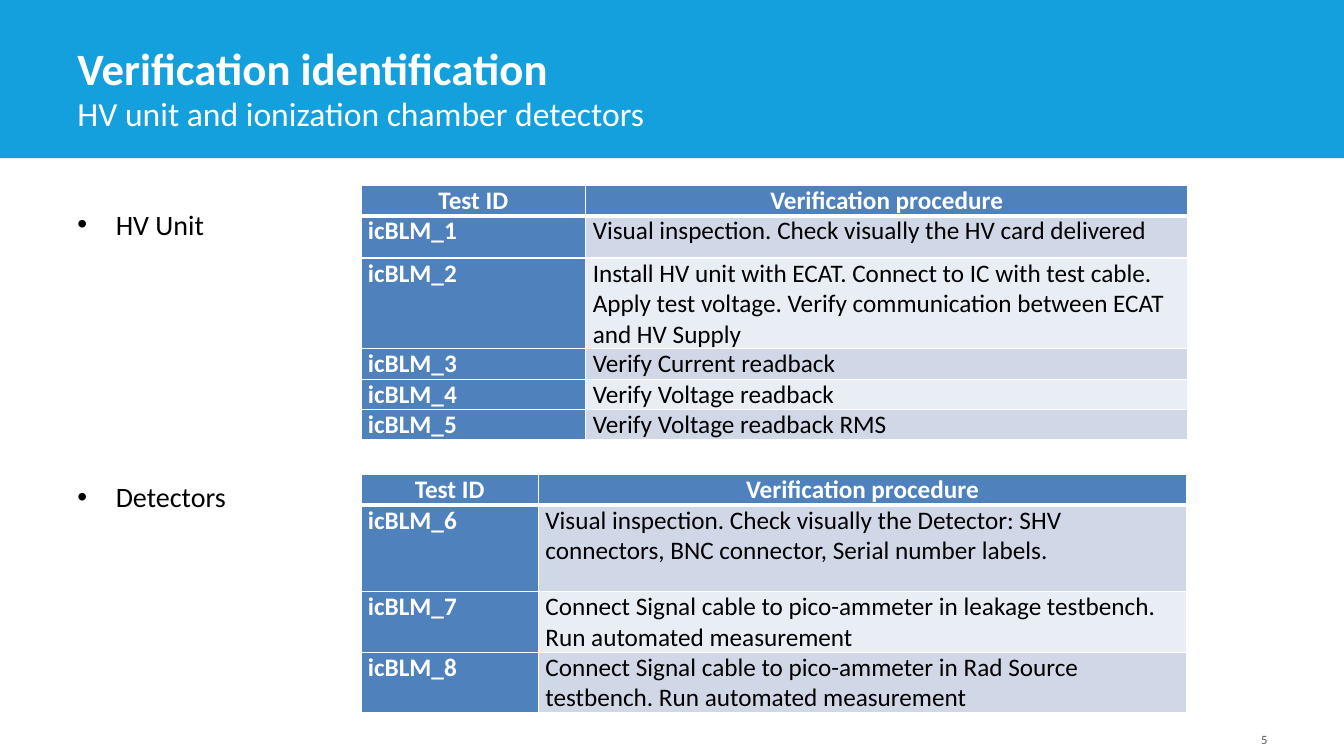
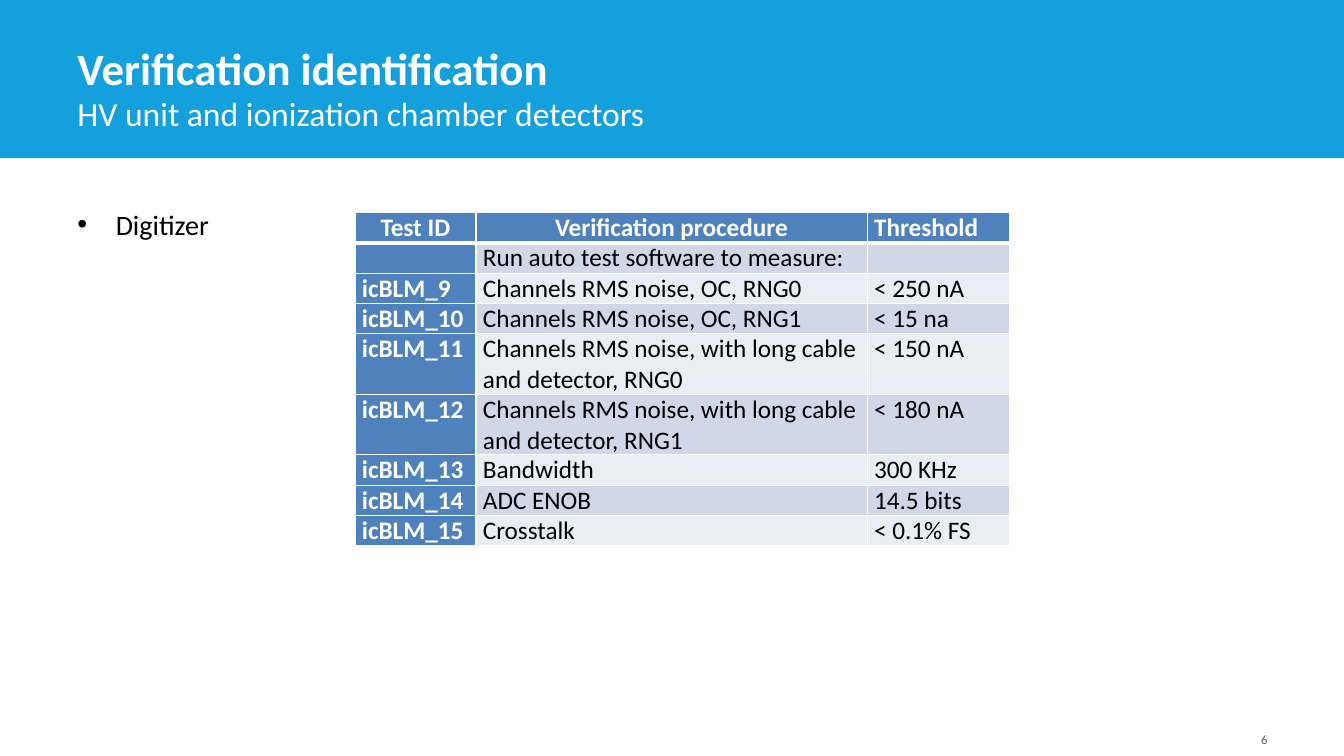
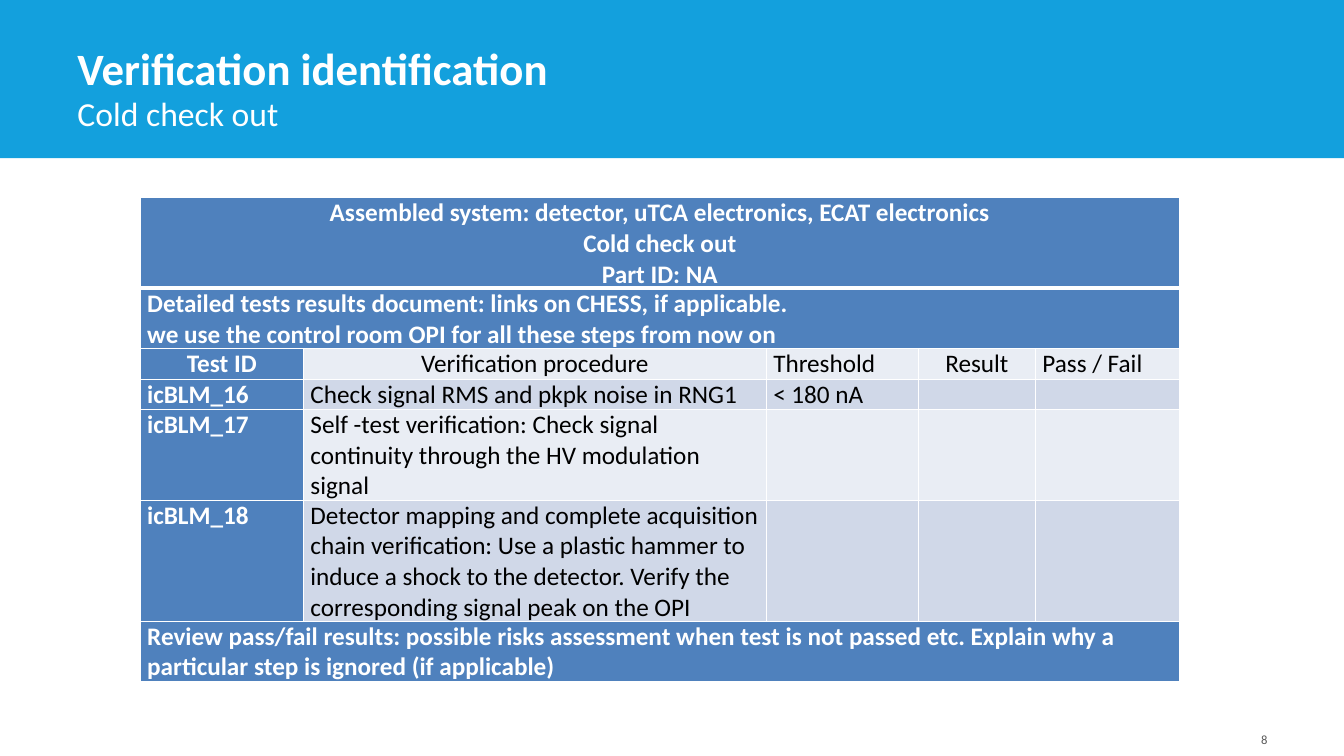
import pptx
import pptx.dml.color
import pptx.enum.shapes
import pptx.enum.text
import pptx.oxml
import pptx.oxml.ns
import pptx.util
from pptx.util import Inches

FONT = "Calibri"
WHITE, BLACK, GRAY = "FFFFFF", "000000", "595959"
BAND_BLUE, HEADER_BLUE = "13A0DD", "4F81BD"
ROW_TINTS = ("E9EDF4", "D0D8E8")
SLIDE_WIDTH, SLIDE_HEIGHT = 13.33, 7.5
MARGIN = 0.67
LINE_HEIGHT = 0.3
CENTERED_HEADINGS = {"Test ID", "Verification procedure", "Result"}
ALIGN = pptx.enum.text.PP_ALIGN
ANCHOR = pptx.enum.text.MSO_ANCHOR

HV_ROWS = [
    ("Test ID", "Verification procedure"),
    ("icBLM_1", "Visual inspection. Check visually the HV card delivered"),
    ("icBLM_2", "Install HV unit with ECAT. Connect to IC with test cable. Apply test voltage. "
                "Verify communication between ECAT and HV Supply"),
    ("icBLM_3", "Verify Current readback"),
    ("icBLM_4", "Verify Voltage readback"),
    ("icBLM_5", "Verify Voltage readback RMS"),
]
DETECTOR_ROWS = [
    ("Test ID", "Verification procedure"),
    ("icBLM_6", "Visual inspection. Check visually the Detector: SHV connectors, BNC connector, "
                "Serial number labels."),
    ("icBLM_7", "Connect Signal cable to pico-ammeter in leakage testbench. Run automated measurement"),
    ("icBLM_8", "Connect Signal cable to pico-ammeter in Rad Source testbench. Run automated measurement"),
]
DIGITIZER_ROWS = [
    ("Test ID", "Verification procedure", "Threshold"),
    ("", "Run auto test software to measure:", ""),
    ("icBLM_9", "Channels RMS noise, OC, RNG0", "< 250 nA"),
    ("icBLM_10", "Channels RMS noise, OC, RNG1", "< 15 na"),
    ("icBLM_11", "Channels RMS noise, with long cable and detector, RNG0", "< 150 nA"),
    ("icBLM_12", "Channels RMS noise, with long cable and detector, RNG1", "< 180 nA"),
    ("icBLM_13", "Bandwidth", "300 KHz"),
    ("icBLM_14", "ADC ENOB", "14.5 bits"),
    ("icBLM_15", "Crosstalk", "< 0.1% FS"),
]
COLD_CHECK_ROWS = [
    ("Assembled system: detector, uTCA electronics, ECAT electronics\nCold check out\nPart ID: NA",),
    ("Detailed tests results document: links on CHESS, if applicable.\n"
     "we use the control room OPI for all these steps from now on",),
    ("Test ID", "Verification procedure", "Threshold", "Result", "Pass / Fail"),
    ("icBLM_16", "Check signal RMS and pkpk noise in RNG1", "< 180 nA", "", ""),
    ("icBLM_17", "Self -test verification: Check signal continuity through the HV modulation signal",
     "", "", ""),
    ("icBLM_18", "Detector mapping and complete acquisition chain verification: Use a plastic hammer "
                 "to induce a shock to the detector. Verify the corresponding signal peak on the OPI",
     "", "", ""),
    ("Review pass/fail results: possible risks assessment when test is not passed etc. "
     "Explain why a particular step is ignored (if applicable)",),
]


def color(hex_value):
    return pptx.dml.color.RGBColor.from_string(hex_value)


def write_text(frame, text, size=18, fill=BLACK, bold=False, align=ALIGN.LEFT, bullet=False):
    frame.word_wrap = True
    for index, line in enumerate(text.split("\n")):
        paragraph = frame.paragraphs[0] if index == 0 else frame.add_paragraph()
        paragraph.alignment = align
        if bullet:
            properties = paragraph._p.get_or_add_pPr()
            properties.set("marL", str(Inches(0.38)))
            properties.set("indent", str(-Inches(0.38)))
            for tag, key, value in (("a:buFont", "typeface", "Arial"), ("a:buChar", "char", "•")):
                element = pptx.oxml.ns.qn(tag)
                properties.append(properties.makeelement(element, {key: value}))
        if line:
            run = paragraph.add_run()
            run.text = line
            run.font.name = FONT
            run.font.size = pptx.util.Pt(size)
            run.font.bold = bold
            run.font.color.rgb = color(fill)


def add_text(slide, text, left, top, width, height, anchor=ANCHOR.TOP, **text_format):
    box = slide.shapes.add_textbox(Inches(left), Inches(top), Inches(width), Inches(height))
    box.text_frame.vertical_anchor = anchor
    write_text(box.text_frame, text, **text_format)


def add_bullet(slide, text, top):
    add_text(slide, text, MARGIN, top, 1.83, 0.47, size=20, bullet=True)


def set_borders(cell, top_width, bottom_width):
    properties = cell._tc.get_or_add_tcPr()
    edges = (("lnL", 1), ("lnR", 1), ("lnT", top_width), ("lnB", bottom_width))
    for index, (edge, width) in enumerate(edges):
        properties.insert(index, pptx.oxml.parse_xml(
            f'<a:{edge} {pptx.oxml.ns.nsdecls("a")} w="{pptx.util.Pt(width)}">'
            f'<a:solidFill><a:srgbClr val="{WHITE}"/></a:solidFill></a:{edge}>'))


def format_cell(cell, row_index, accented):
    cell.margin_left = cell.margin_right = Inches(0.07)
    cell.margin_top = cell.margin_bottom = 0
    cell.fill.solid()
    cell.fill.fore_color.rgb = color(HEADER_BLUE if accented else ROW_TINTS[row_index % 2])
    set_borders(cell, 3 if row_index == 1 else 1, 3 if row_index == 0 else 1)


def add_test_table(slide, rows, left, top, column_widths, row_heights):
    table = slide.shapes.add_table(
        len(rows), len(column_widths), Inches(left), Inches(top),
        Inches(sum(column_widths)), Inches(sum(row_heights))).table
    table.first_row = table.horz_banding = False
    for column, width in zip(table.columns, column_widths):
        column.width = Inches(width)
    last_column = len(column_widths) - 1
    for row_index, (texts, height) in enumerate(zip(rows, row_heights)):
        table.rows[row_index].height = Inches(height)
        spanned = len(texts) == 1
        if spanned:
            table.cell(row_index, 0).merge(table.cell(row_index, last_column))
        for column_index in range(last_column + 1):
            accented = spanned or row_index == 0 or column_index == 0
            format_cell(table.cell(row_index, column_index), row_index, accented)
        for column_index, text in enumerate(texts):
            accented = spanned or row_index == 0 or column_index == 0
            centered = text in CENTERED_HEADINGS or (spanned and row_index == 0)
            write_text(table.cell(row_index, column_index).text_frame, text, bold=accented,
                       fill=WHITE if accented else BLACK,
                       align=ALIGN.CENTER if centered else ALIGN.LEFT)


def line_heights(*line_counts):
    return [LINE_HEIGHT * count for count in line_counts]


def add_base_slide(presentation, subtitle, number):
    slide = presentation.slides.add_slide(presentation.slide_layouts[6])
    band = slide.shapes.add_shape(pptx.enum.shapes.MSO_SHAPE.RECTANGLE, 0, 0,
                                  Inches(SLIDE_WIDTH), Inches(1.57))
    band.shadow.inherit = False
    band.fill.solid()
    band.fill.fore_color.rgb = color(BAND_BLUE)
    band.line.fill.background()
    add_text(slide, "Verification identification", MARGIN, 0.38, 10.41, 0.61,
             anchor=ANCHOR.BOTTOM, size=32, fill=WHITE, bold=True)
    add_text(slide, subtitle, MARGIN, 0.87, 10.41, 0.65, size=24, fill=WHITE)
    add_text(slide, str(number), 9.56, 7.06, 3.11, 0.4, anchor=ANCHOR.BOTTOM,
             size=9, fill=GRAY, align=ALIGN.RIGHT)
    return slide


def add_hardware_slide(presentation):
    slide = add_base_slide(presentation, "HV unit and ionization chamber detectors", 5)
    add_bullet(slide, "HV Unit", 2.01)
    add_test_table(slide, HV_ROWS, 3.58, 1.84, (2.23, 5.97), line_heights(1, 1.4, 3, 1, 1, 1))
    add_bullet(slide, "Detectors", 4.71)
    add_test_table(slide, DETECTOR_ROWS, 3.58, 4.71, (1.76, 6.43), [0.3, 0.86, 0.6, 0.6])


def add_digitizer_slide(presentation):
    slide = add_base_slide(presentation, "HV unit and ionization chamber detectors", 6)
    add_bullet(slide, "Digitizer", 2.01)
    add_test_table(slide, DIGITIZER_ROWS, 3.52, 2.11, (1.2, 3.88, 1.41),
                   line_heights(1, 1, 1, 1, 2, 2, 1, 1, 1))


def add_cold_check_slide(presentation):
    slide = add_base_slide(presentation, "Cold check out", 8)
    add_test_table(slide, COLD_CHECK_ROWS, 1.39, 1.96, (1.62, 4.59, 1.51, 1.16, 1.43),
                   line_heights(3, 2, 1, 1, 3, 4, 2))


def main():
    presentation = pptx.Presentation()
    presentation.slide_width = Inches(SLIDE_WIDTH)
    presentation.slide_height = Inches(SLIDE_HEIGHT)
    add_hardware_slide(presentation)
    add_digitizer_slide(presentation)
    add_cold_check_slide(presentation)
    presentation.save("out.pptx")


if __name__ == "__main__":
    main()
